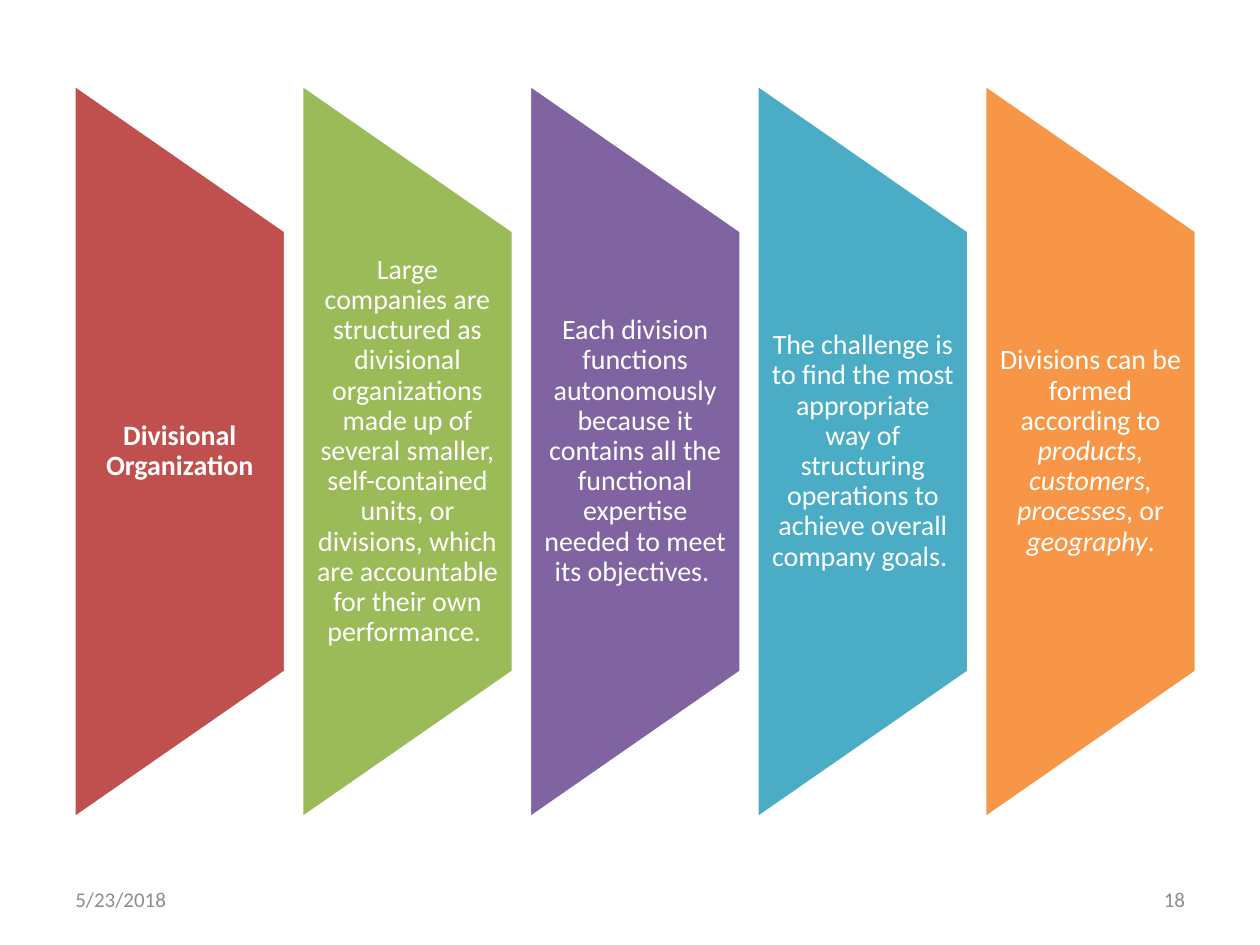
from pptx import Presentation
from pptx.dml.color import RGBColor
from pptx.enum.shapes import MSO_SHAPE
from pptx.enum.text import MSO_ANCHOR, PP_ALIGN
from pptx.util import Cm, Pt

PANEL = MSO_SHAPE.FLOWCHART_MANUAL_OPERATION
MIDDLE = MSO_ANCHOR.MIDDLE
LEFT, CENTER, RIGHT = PP_ALIGN.LEFT, PP_ALIGN.CENTER, PP_ALIGN.RIGHT

PLAIN, BOLD, SLANT = "plain", "bold", "slant"
PANELS = [
    ("C0504D", [("Divisional Organization", BOLD)]),
    ("9BBB59", [("Large companies are structured as divisional organizations "
                 "made up of several smaller, self-contained units, or divisions, "
                 "which are accountable for their own performance. ", PLAIN)]),
    ("8064A2", [("Each division functions autonomously because it contains all "
                 "the functional expertise needed to meet its objectives. ", PLAIN)]),
    ("4BACC6", [("The challenge is to find the most appropriate way of structuring "
                 "operations to achieve overall company goals. ", PLAIN)]),
    ("F79646", [("Divisions can be formed according to ", PLAIN),
                ("products, customers, processes", SLANT),
                (", or ", PLAIN), ("geography", SLANT), (".", PLAIN)]),
]
FOOTERS = [("5/23/2018", 1.27, LEFT), ("18", 18.21, RIGHT)]

START, STEP, WIDE, TALL = 1.49, 4.59, 4.27, 14.81
MID, BODY = 9.1, 8.89


def color(code):
    return RGBColor.from_string(code)


def add_text(slide, box, runs, size, code, align, inset):
    frame = slide.shapes.add_textbox(*map(Cm, box)).text_frame
    frame.word_wrap = True
    frame.vertical_anchor = MIDDLE
    frame.margin_left = frame.margin_right = Cm(inset)
    frame.margin_top = frame.margin_bottom = 0
    para = frame.paragraphs[0]
    para.alignment = align
    para.line_spacing = 0.9
    for words, style in runs:
        run = para.add_run()
        run.text = words
        font = run.font
        font.name, font.size = "Calibri", Pt(size)
        font.bold, font.italic = style == BOLD, style == SLANT
        font.color.rgb = color(code)


def add_panel(slide, left, code):
    mid = left + WIDE / 2
    shape = slide.shapes.add_shape(
        PANEL, Cm(mid - TALL / 2), Cm(MID - WIDE / 2), Cm(TALL), Cm(WIDE))
    shape.rotation = 270
    shape.shadow.inherit = False
    shape.fill.solid()
    shape.fill.fore_color.rgb = color(code)
    shape.line.color.rgb = color("FFFFFF")
    shape.line.width = Pt(2)


def main():
    deck = Presentation()
    deck.slide_width, deck.slide_height = Cm(25.4), Cm(19.05)
    slide = deck.slides.add_slide(deck.slide_layouts[6])
    for words, left, align in FOOTERS:
        add_text(slide, (left, 17.66, 5.93, 1.01), [(words, PLAIN)],
                 12, "8C8C8C", align, 0.25)
    for col, (code, runs) in enumerate(PANELS):
        left = START + col * STEP
        add_panel(slide, left, code)
        add_text(slide, (left, MID - BODY / 2, WIDE, BODY), runs,
                 16, "FFFFFF", CENTER, 0.28)
    deck.save("out.pptx")


if __name__ == "__main__":
    main()
